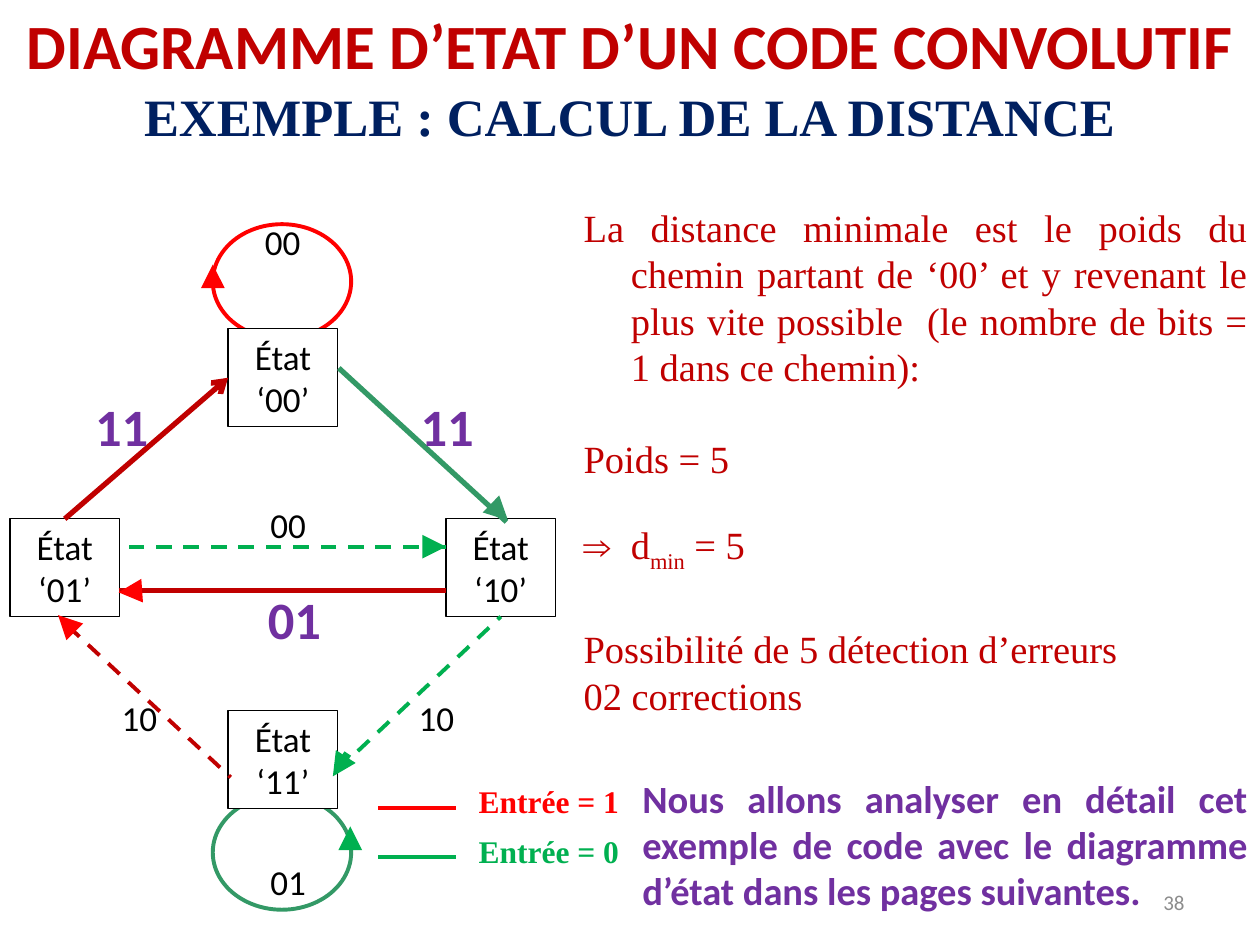
from typing import NamedTuple, Optional

from lxml.etree import SubElement
from pptx import Presentation
from pptx.dml.color import RGBColor
from pptx.enum.dml import MSO_LINE_DASH_STYLE as Dash
from pptx.enum.shapes import MSO_CONNECTOR as Link, MSO_SHAPE as Preset
from pptx.enum.text import MSO_ANCHOR as Anchor, MSO_AUTO_SIZE as Fit, PP_ALIGN as Align
from pptx.oxml.ns import qn
from pptx.util import Cm, Pt

BLACK = RGBColor(0x00, 0x00, 0x00)
WHITE = RGBColor(0xFF, 0xFF, 0xFF)
RED = RGBColor(0xFF, 0x00, 0x00)
DARK_RED = RGBColor(0xC0, 0x00, 0x00)
GREEN = RGBColor(0x00, 0xB0, 0x50)
SEA_GREEN = RGBColor(0x33, 0x99, 0x66)
PURPLE = RGBColor(0x70, 0x30, 0xA0)
NAVY = RGBColor(0x00, 0x20, 0x60)
GRAY = RGBColor(0x8C, 0x8C, 0x8C)
SANS, SERIF = "Calibri", "Times New Roman"
TOP, LEFT, BOTTOM = 0, 1, 2


class Style(NamedTuple):
    size: float
    color: RGBColor
    bold: bool = False
    name: str = SANS
    align: Align = Align.CENTER


class Label(NamedTuple):
    text: str
    place: tuple
    style: Style


class State(NamedTuple):
    code: str
    left: float
    top: float


class Loop(NamedTuple):
    top: float
    color: RGBColor


class Edge(NamedTuple):
    start: tuple
    end: tuple
    color: RGBColor
    width: float
    head: Optional[str] = None
    dashed: bool = False
    begin_site: Optional[tuple] = None
    end_site: Optional[tuple] = None


class Item(NamedTuple):
    pieces: tuple
    gap: float = 0
    bullet: Optional[str] = None


PLAIN = Style(20, BLACK)
STRONG = Style(30, PURPLE, True)
HEADING = Style(36, DARK_RED, True)
BODY = Style(22, DARK_RED, name=SERIF, align=Align.JUSTIFY)

STATE_SIZE = (2.21, 1.97)
STATES = [State("00", 4.6, 6.63), State("11", 4.6, 14.33),
          State("01", 0.2, 10.46), State("10", 8.99, 10.46)]
LOOPS = [Loop(16.03, SEA_GREEN), Loop(4.52, RED)]

EDGES = [
    Edge((6.83, 7.42), (10.21, 10.52), SEA_GREEN, 3),
    Edge((9.93, 10.19), (10.24, 10.49), SEA_GREEN, 4.5, "triangle"),
    Edge((4.29, 5.72), (4.29, 5.33), RED, 4.5, "triangle"),
    Edge((1.37, 12.62), (4.65, 15.67), DARK_RED, 2.25, dashed=True),
    Edge((1.47, 12.7), (1.17, 12.4), RED, 4.5, "triangle"),
    Edge((2.39, 11.91), (8.99, 11.91), DARK_RED, 3),
    Edge((2.82, 11.91), (2.39, 11.94), RED, 4.5, "triangle"),
    Edge((8.99, 11.02), (2.39, 11.02), GREEN, 2.25, dashed=True),
    Edge((8.56, 11.02), (8.99, 11.02), GREEN, 4.5, "triangle"),
    Edge((6.81, 15.52), (10.19, 12.42), GREEN, 2.25, dashed=True, end_site=("10", BOTTOM)),
    Edge((7.01, 15.19), (6.71, 15.65), GREEN, 4.5, "triangle"),
    Edge((7.06, 17.07), (7.06, 16.66), GREEN, 4.5, "triangle"),
    Edge((1.3, 10.46), (4.6, 7.62), DARK_RED, 3, "arrow",
         begin_site=("01", TOP), end_site=("00", LEFT)),
]

LABELS = [
    Label("00", (5, 4.32, 1.4, 1.09), PLAIN),
    Label("00", (5.11, 10.03, 1.4, 1.09), PLAIN),
    Label("10", (8.1, 13.92, 1.4, 1.09), PLAIN),
    Label("10", (2.11, 13.92, 1.4, 1.09), PLAIN),
    Label("01", (5.11, 17.22, 1.4, 1.09), PLAIN),
    Label("11", (8.1, 7.82, 1.83, 1.55), STRONG),
    Label("11", (1.4, 7.82, 2.11, 1.55), STRONG),
    Label("01", (5.11, 11.71, 1.65, 1.55), STRONG),
    Label("EXEMPLE : CALCUL DE LA DISTANCE", (0, 1.57, 25.4, 1.55),
          Style(30, NAVY, True, SERIF)),
    Label("Nous allons analyser en détail cet exemple de code avec le diagramme "
          "d’état dans les pages suivantes.", (12.7, 15.49, 12.7, 3.07),
          Style(22, PURPLE, True, align=Align.JUSTIFY)),
    Label("38", (18.21, 17.8, 5.92, 0.8), Style(12, GRAY, align=Align.RIGHT)),
]

LEGEND = [("Entrée = 1", RED), ("Entrée = 0", GREEN)]
LEGEND_TOP, LEGEND_STEP = 15.65, 0.99

ITEMS = [
    Item(("La distance minimale est le poids du chemin partant de ‘00’ et y revenant "
          "le plus vite possible  (le nombre de bits = 1 dans ce chemin):",)),
    Item(("Poids = 5",), 26.4),
    Item(("d", "min", " = 5"), 26.4, "⇒"),
    Item(("Possibilité de 5 détection d’erreurs",), 29.5),
    Item(("02 corrections",)),
]


def assign(target, values: dict) -> None:
    for key, value in values.items():
        setattr(target, key, value)


def move(shape, place: tuple) -> None:
    assign(shape, dict(zip(("left", "top", "width", "height"), map(Cm, place))))


def set_frame(shape) -> None:
    assign(shape.text_frame, {"word_wrap": True, "auto_size": Fit.NONE,
                              "vertical_anchor": Anchor.TOP})


def add_span(para, text: str, style: Style):
    span = para.add_run()
    span.text = text
    assign(span.font, {"size": Pt(style.size), "bold": style.bold, "name": style.name})
    span.font.color.rgb = style.color
    return span


def write(shape, text: str, style: Style) -> None:
    set_frame(shape)
    para = shape.text_frame.paragraphs[0]
    para.alignment = style.align
    add_span(para, text, style)


def draw_label(page, label: Label) -> None:
    write(page.shapes.add_textbox(*map(Cm, label.place)), label.text, label.style)


def draw_loop(page, loop: Loop) -> None:
    ring = page.shapes.add_shape(Preset.OVAL, Cm(4.29), Cm(loop.top), Cm(2.79), Cm(2.31))
    ring.shadow.inherit = False
    ring.fill.background()
    ring.line.color.rgb = loop.color
    ring.line.width = Pt(2.25)


def draw_state(page, state: State):
    box = page.shapes.add_shape(Preset.RECTANGLE, Cm(state.left), Cm(state.top),
                                *map(Cm, STATE_SIZE))
    box.shadow.inherit = False
    box.fill.solid()
    box.fill.fore_color.rgb = WHITE
    box.line.color.rgb = BLACK
    box.line.width = Pt(0.75)
    write(box, f"État ‘{state.code}’", PLAIN)
    return box


def draw_edge(page, edge: Edge, boxes: dict) -> None:
    line = page.shapes.add_connector(Link.STRAIGHT, *map(Cm, edge.start + edge.end))
    line.line.color.rgb = edge.color
    line.line.width = Pt(edge.width)
    if edge.dashed:
        line.line.dash_style = Dash.DASH
    if edge.head:
        SubElement(line.line._get_or_add_ln(), qn("a:tailEnd"), type=edge.head)
    SubElement(line._element.spPr, qn("a:effectLst"))
    for site, join in ((edge.begin_site, line.begin_connect), (edge.end_site, line.end_connect)):
        if site:
            join(boxes[site[0]], site[1])


def fill_body(body) -> None:
    set_frame(body)
    for index, item in enumerate(ITEMS):
        frame = body.text_frame
        para = frame.add_paragraph() if index else frame.paragraphs[0]
        assign(para, {"alignment": BODY.align, "line_spacing": Pt(26.4),
                      "space_before": Pt(item.gap), "space_after": Pt(0)})
        props = para._p.get_or_add_pPr()
        assign(props, {"marL": 0, "indent": 0})
        if item.bullet:
            SubElement(props, qn("a:buFont"), typeface=SERIF)
            SubElement(props, qn("a:buChar"), char=item.bullet)
        else:
            SubElement(props, qn("a:buNone"))
        for piece in item.pieces:
            span = add_span(para, piece, BODY)
            if piece == "min":
                span.font._element.set("baseline", "-25000")


def main() -> None:
    deck = Presentation()
    assign(deck, {"slide_width": Cm(25.4), "slide_height": Cm(19.05)})
    page = deck.slides.add_slide(deck.slide_layouts[1])
    title, body = page.placeholders
    move(title, (0, 0, 25.4, 1.8))
    write(title, "DIAGRAMME D’ETAT D’UN CODE CONVOLUTIF", HEADING)
    move(body, (11.51, 3.99, 13.89, 11.38))
    fill_body(body)
    for loop in LOOPS:
        draw_loop(page, loop)
    boxes = {state.code: draw_state(page, state) for state in STATES}
    for edge in EDGES:
        draw_edge(page, edge, boxes)
    for label in LABELS:
        draw_label(page, label)
    for row, (text, color) in enumerate(LEGEND):
        top = LEGEND_TOP + row * LEGEND_STEP
        draw_edge(page, Edge((7.62, top + 0.63), (9.19, top + 0.63), color, 2.25), boxes)
        draw_label(page, Label(text, (9.4, top, 3.58, 1.02),
                               Style(18, color, True, SERIF, Align.LEFT)))
    deck.save("out.pptx")


if __name__ == "__main__":
    main()
